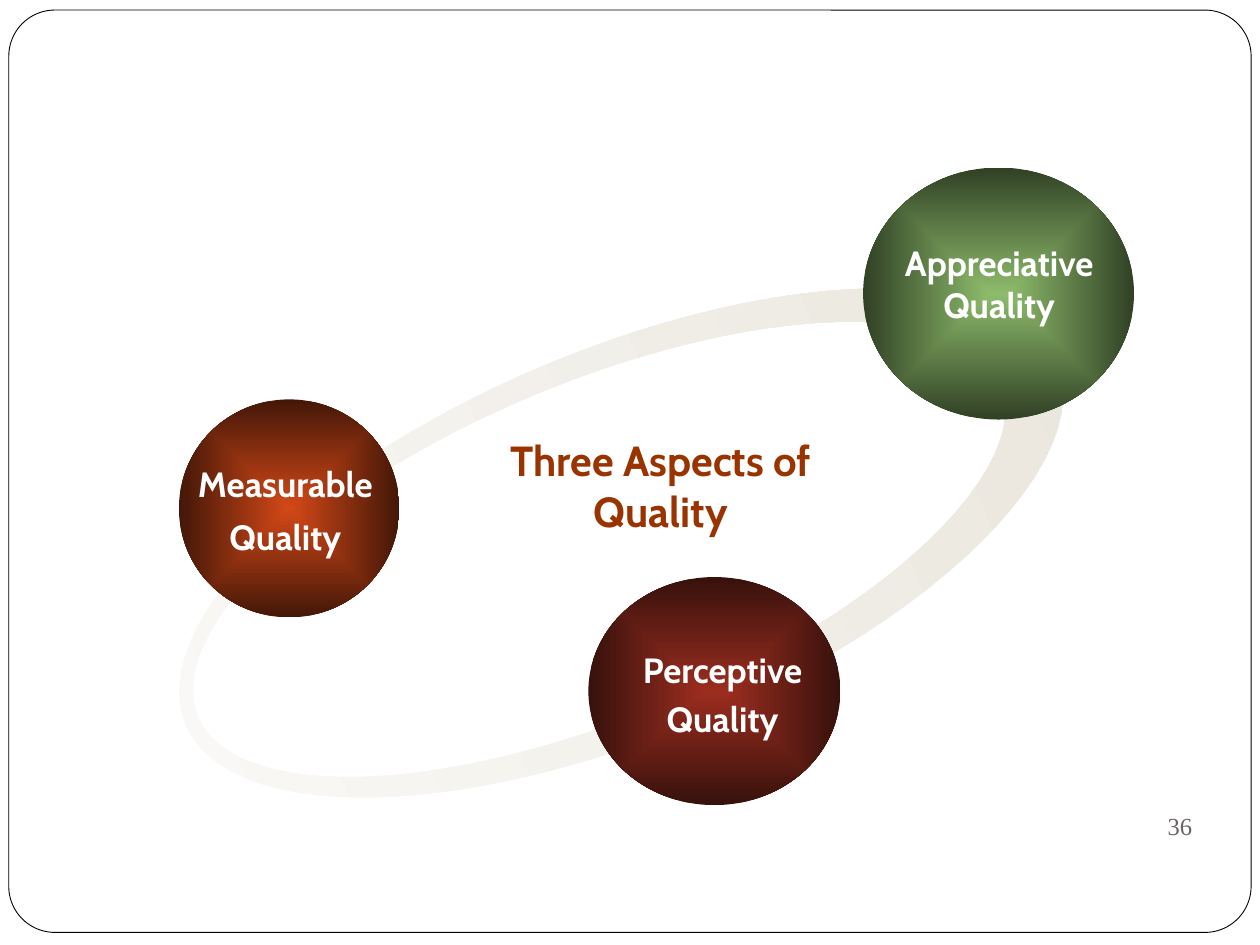
from math import cos, pi, sin

from lxml import etree
from pptx import Presentation
from pptx.dml.color import RGBColor
from pptx.enum.shapes import MSO_SHAPE
from pptx.enum.text import MSO_ANCHOR, PP_ALIGN
from pptx.oxml.ns import qn
from pptx.util import Inches, Pt

ROUNDED, OVAL = MSO_SHAPE.ROUNDED_RECTANGLE, MSO_SHAPE.OVAL
TOP, MIDDLE = MSO_ANCHOR.TOP, MSO_ANCHOR.MIDDLE
CENTER, RIGHT = PP_ALIGN.CENTER, PP_ALIGN.RIGHT

THEME = {
    "frame": "000000",
    "ring": ("FBFAF8", "E9E5DC"),
    "measurable": ("D34817", "431708"),
    "appreciative": ("8DBB6B", "314125"),
    "perceptive": ("9B2D1F", "37110C"),
    "title": {"name": "Cabin", "size": Pt(24), "bold": True, "color": "993300"},
    "label": {"name": "Cabin", "size": Pt(20), "bold": True, "color": "FFFFFF"},
    "number": {"name": "Times New Roman", "size": Pt(14), "bold": False, "color": "696464"},
}


def write(holder, lines, style, align=CENTER, before=0, wrap=True, anchor=TOP):
    frame = holder.text_frame
    frame.word_wrap = wrap
    frame.vertical_anchor = anchor
    frame.text = "\n".join(lines)
    for paragraph in frame.paragraphs:
        paragraph.alignment = align
        paragraph.space_before = Pt(before)
        paragraph.line_spacing = 1.0
        font = paragraph.runs[0].font
        for key, value in THEME[style].items():
            if key == "color":
                font.color.rgb = RGBColor.from_string(value)
            else:
                setattr(font, key, value)


def shade(shape, colors, radial=False):
    shape.shadow.inherit = False
    shape.line.fill.background()
    shape.fill.gradient()
    shape.fill.gradient_angle = 0
    for stop, color in zip(shape.fill.gradient_stops, colors):
        stop.color.rgb = RGBColor.from_string(color)
    if radial:
        gradient = shape.fill._xPr.find(qn("a:gradFill"))
        linear = gradient.find(qn("a:lin"))
        center = etree.Element(qn("a:path"), {"path": "shape"})
        etree.SubElement(center, qn("a:fillToRect"), dict.fromkeys("ltrb", "50000"))
        gradient.replace(linear, center)


deck = Presentation()
deck.slide_width, deck.slide_height = Inches(10), Inches(7.5)
slide = deck.slides.add_slide(deck.slide_layouts[5])
shapes = slide.shapes

title = shapes.title
title.left, title.top = Inches(3.83), Inches(3.4)
title.width, title.height = Inches(2.83), Inches(0.9)
write(title, ["Three Aspects of Quality"], "title")

border = shapes.add_shape(ROUNDED, Inches(0.07), Inches(0.08), Inches(9.86), Inches(7.32))
border.adjustments[0] = 0.05
border.shadow.inherit = False
border.fill.background()
border.line.color.rgb = RGBColor.from_string(THEME["frame"])
border.line.width = Pt(0.5)

STEPS = 96
contours = []
for center_x, center_y, radius_x, radius_y, turn in (
    (4.93, 4.31, 3.745, 1.535, 1),
    (4.75, 4.29, 3.45, 1.33, -1),
):
    angles = [turn * 2 * pi * step / STEPS for step in range(STEPS)]
    contours.append([
        (Inches(center_x + radius_x * cos(a)), Inches(center_y + radius_y * sin(a)))
        for a in angles
    ])
outer, inner = contours
builder = shapes.build_freeform(*outer[0])
builder.add_line_segments(outer[1:], close=True)
builder.move_to(*inner[0])
builder.add_line_segments(inner[1:], close=True)
ring = builder.convert_to_shape()
ring.rotation = 337.4
shade(ring, THEME["ring"])

aspects = [
    ("measurable", (1.42, 3.17, 1.75, 1.73), (1.44, 3.62, 1.65, 0.79),
     ["Measurable", "Quality"], 6.6, False),
    ("appreciative", (6.85, 1.33, 2.15, 2), (6.94, 1.87, 1.98, 0.8),
     ["Appreciative Quality"], 1.6, True),
    ("perceptive", (4.67, 4.58, 2, 1.81), (4.97, 5.1, 1.53, 1.06),
     ["Perceptive", "Quality"], 4, False),
]
for aspect, ball_box, label_box, lines, before, wrap in aspects:
    ball = shapes.add_shape(OVAL, *map(Inches, ball_box))
    shade(ball, THEME[aspect], radial=True)
    label = shapes.add_textbox(*map(Inches, label_box))
    write(label, lines, "label", before=before, wrap=wrap)

page_number = shapes.add_textbox(Inches(8.89), Inches(6.27), Inches(0.67), Inches(0.57))
write(page_number, ["36"], "number", align=RIGHT, anchor=MIDDLE)

deck.save("out.pptx")
